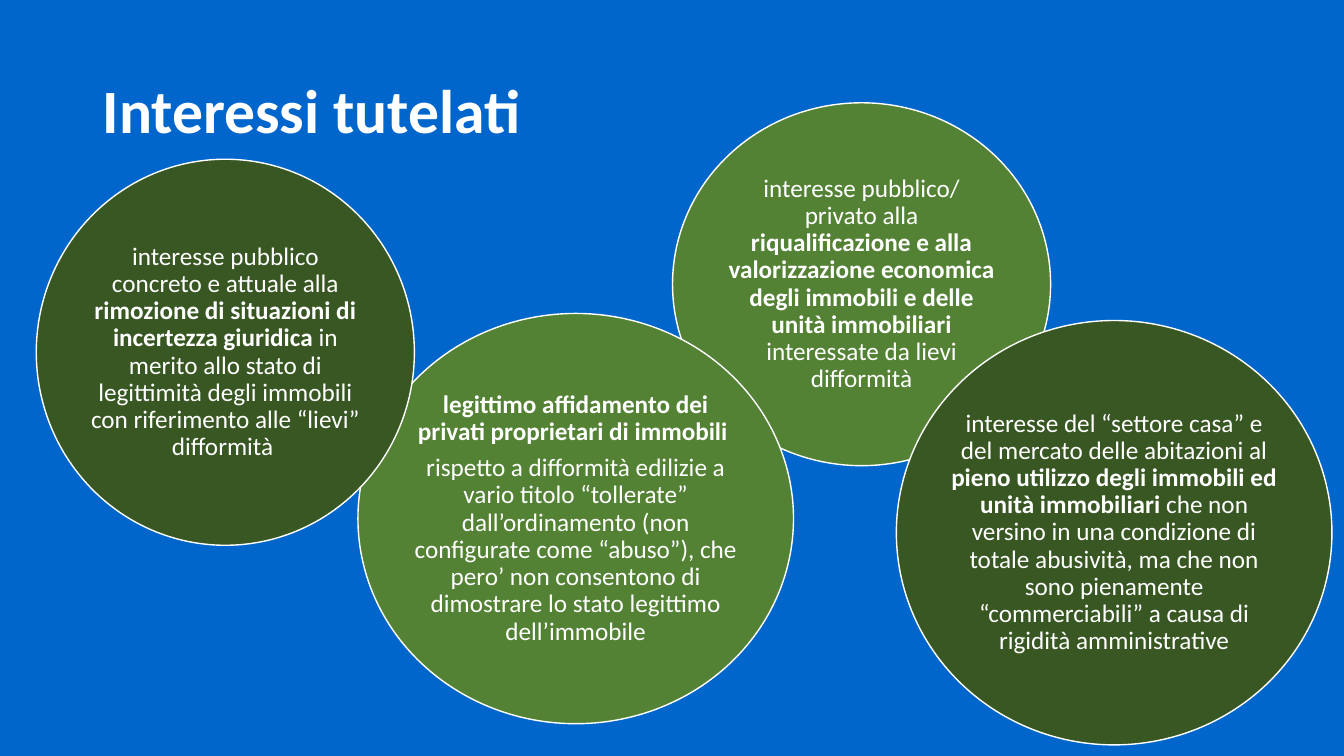
from pptx import Presentation
from pptx.dml.color import RGBColor
from pptx.enum.shapes import MSO_SHAPE as Preset
from pptx.enum.text import MSO_ANCHOR as Anchor, PP_ALIGN as Align
from pptx.util import Inches, Pt

WIDTH, HEIGHT = 13.33, 7.5
BLUE, WHITE = "0066CC", "FFFFFF"
DARK_GREEN, GREEN = "385723", "548235"
INSET_X, INSET_Y = 0.53, 0.4  # text margins inside a circle

# Circles from back to front: box, fill, paragraphs of (text, bold) spans
CIRCLES = [
    ((6.67, 1.02, 3.75, 3.6), GREEN, [[
        ("interesse pubblico/ privato alla ", False),
        ("riqualificazione e alla valorizzazione economica degli immobili "
         "e delle unità immobiliari", True),
        (" interessate da lievi difformità", False)]]),
    ((3.55, 3.11, 4.32, 4.07), GREEN, [
        [("legittimo affidamento dei privati proprietari di immobili ", True)],
        [("rispetto a difformità edilizie a vario titolo “tollerate” "
          "dall’ordinamento (non configurate come “abuso”), che pero’ non "
          "consentono di dimostrare lo stato legittimo dell’immobile", False)]]),
    ((0.36, 1.58, 3.75, 3.83), DARK_GREEN, [[
        ("interesse pubblico concreto e attuale alla ", False),
        ("rimozione di situazioni di incertezza giuridica", True),
        (" in merito allo stato di legittimità degli immobili con "
         "riferimento alle “lievi” difformità ", False)]]),
    ((8.89, 3.18, 4.32, 4.21), DARK_GREEN, [[
        ("interesse del “settore casa” e del mercato delle abitazioni al ", False),
        ("pieno utilizzo degli immobili ed unità immobiliari ", True),
        ("che non versino in una condizione di totale abusività, ma che non "
         "sono pienamente “commerciabili” a causa di rigidità "
         "amministrative", False)]]),
]


def color(hex_code):
    return RGBColor.from_string(hex_code)


def add_text(page, box, paragraphs, size=18, align=Align.CENTER,
             margin=0, after=0):
    frame = page.shapes.add_textbox(*map(Inches, box)).text_frame
    frame.word_wrap = True
    frame.vertical_anchor = Anchor.MIDDLE
    frame.margin_left = frame.margin_right = Inches(margin)
    frame.margin_top = frame.margin_bottom = Inches(margin / 2)
    for index, spans in enumerate(paragraphs):
        para = frame.add_paragraph() if index else frame.paragraphs[0]
        para.alignment = align
        para.line_spacing = 0.9
        para.space_after = Pt(after)
        for text, bold in spans:
            span = para.add_run()
            span.text = text
            span.font.name = "Calibri"
            span.font.size = Pt(size)
            span.font.bold = bold
            span.font.color.rgb = color(WHITE)


def add_title(page, box):
    add_text(page, box, [[("Interessi tutelati", True)]], size=44,
             align=Align.LEFT, margin=0.1)


def add_circle(page, box, fill, paragraphs):
    left, top, width, height = box
    circle = page.shapes.add_shape(Preset.OVAL, *map(Inches, box))
    circle.shadow.inherit = False
    circle.fill.solid()
    circle.fill.fore_color.rgb = color(fill)
    circle.line.color.rgb = color(WHITE)
    circle.line.width = Pt(1)
    # The text runs wider than the oval's own text area
    inner = (left + INSET_X, top + INSET_Y,
             width - 2 * INSET_X, height - 2 * INSET_Y)
    add_text(page, inner, paragraphs, after=6.3)


def main():
    deck = Presentation()
    deck.slide_width, deck.slide_height = Inches(WIDTH), Inches(HEIGHT)
    page = deck.slides.add_slide(deck.slide_layouts[6])
    page.background.fill.solid()
    page.background.fill.fore_color.rgb = color(BLUE)

    add_title(page, (0.92, 0.4, 11.5, 1.45))
    for box, fill, paragraphs in CIRCLES:
        add_circle(page, box, fill, paragraphs)

    deck.save("out.pptx")


if __name__ == "__main__":
    main()
